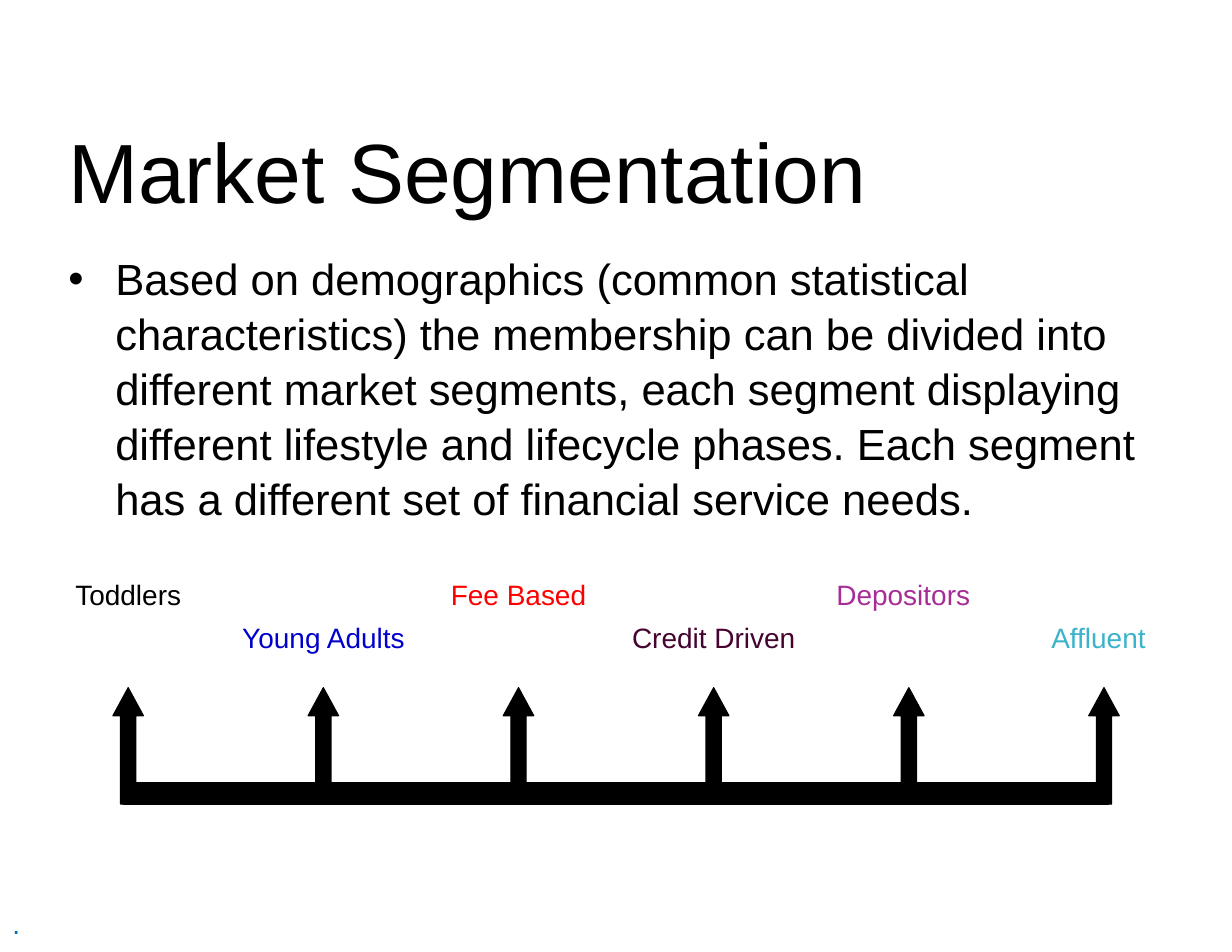
from typing import NamedTuple

from lxml.etree import SubElement
from pptx import Presentation
from pptx.dml.color import RGBColor
from pptx.enum.shapes import MSO_SHAPE
from pptx.enum.text import MSO_ANCHOR, MSO_AUTO_SIZE, PP_ALIGN
from pptx.oxml.ns import qn
from pptx.util import Inches, Pt

WIDTH, HEIGHT = Inches(11), Inches(8.5)
COLUMNS, ROWS = 44, 34
FONT = "Arial"
BLACK = "000000"

FIRST_CENTRE, PITCH = 4.58, 6.97
LABEL_ROWS = (20.4, 21.92)


class Area(NamedTuple):
    """A place on the slide, in grid columns and rows."""
    left: float
    top: float
    width: float
    height: float

    def lengths(self) -> tuple[int, int, int, int]:
        column, row = WIDTH / COLUMNS, HEIGHT / ROWS
        return (round(self.left * column), round(self.top * row),
                round(self.width * column), round(self.height * row))


class Segment(NamedTuple):
    name: str
    color: str
    label_width: float
    shift: float = 0


SEGMENTS = [
    Segment("Toddlers", BLACK, 6.96),
    Segment("Young Adults", "0000CC", 9.92),
    Segment("Fee Based", "FF0000", 6.96),
    Segment("Credit Driven", "45032F", 9.88),
    Segment("Depositors", "A72D96", 7.32, shift=-0.2),
    Segment("Affluent", "3BB3CB", 8.08, shift=-0.2),
]

DESCRIPTION = (
    "Based on demographics (common statistical characteristics) the membership "
    "can be divided into different market segments, each segment displaying "
    "different lifestyle and lifecycle phases. Each segment has a different "
    "set of financial service needs."
)


def rgb(color: str) -> RGBColor:
    return RGBColor.from_string(color)


def write(box, text: str, *, size: float, color: str = BLACK,
          align=PP_ALIGN.LEFT, anchor=MSO_ANCHOR.TOP,
          spacing: float = 1.0, bullet_indent: float = 0) -> None:
    frame = box.text_frame
    frame.word_wrap = True
    frame.auto_size = MSO_AUTO_SIZE.NONE
    frame.vertical_anchor = anchor
    frame.margin_left = frame.margin_right = Inches(0.11)
    frame.margin_top = frame.margin_bottom = Inches(0.06)
    para = frame.paragraphs[0]
    para.alignment = align
    para.line_spacing = spacing
    if bullet_indent:
        properties = para._p.get_or_add_pPr()
        properties.set("marL", str(Inches(bullet_indent)))
        properties.set("indent", str(-Inches(bullet_indent)))
        SubElement(properties, qn("a:buFont"), typeface=FONT)
        SubElement(properties, qn("a:buChar"), char="•")
    span = para.add_run()
    span.text = text
    span.font.name = FONT
    span.font.size = Pt(size)
    span.font.color.rgb = rgb(color)


def add_text(page, area: Area, text: str, **text_format) -> None:
    write(page.shapes.add_textbox(*area.lengths()), text, **text_format)


def add_solid(page, kind, area: Area):
    shape = page.shapes.add_shape(kind, *area.lengths())
    shape.shadow.inherit = False
    shape.fill.solid()
    shape.fill.fore_color.rgb = rgb(BLACK)
    shape.line.color.rgb = rgb(BLACK)
    shape.line.width = Pt(0.75)
    return shape


def add_segment(page, index: int, segment: Segment) -> None:
    """Draw one arrow of the scale with its label above."""
    centre = FIRST_CENTRE + index * PITCH
    arrow_width = 1.09
    arrow = add_solid(page, MSO_SHAPE.UP_ARROW,
                      Area(centre - arrow_width / 2, 24.56, arrow_width, 4.16))
    arrow.adjustments[0] = 0.5
    arrow.adjustments[1] = 0.92
    label = Area(centre + segment.shift - segment.label_width / 2,
                 LABEL_ROWS[index % 2], segment.label_width, 1.64)
    add_text(page, label, segment.name, size=18, color=segment.color,
             align=PP_ALIGN.CENTER)


def main() -> None:
    deck = Presentation()
    deck.slide_width, deck.slide_height = WIDTH, HEIGHT
    page = deck.slides.add_slide(deck.slide_layouts[5])

    title = page.shapes.title
    title.left, title.top, title.width, title.height = Area(2, 4, 41, 4.16).lengths()
    write(title, "Market Segmentation", size=54, anchor=MSO_ANCHOR.MIDDLE)

    add_text(page, Area(2, 8.68, 39.6, 15.88), DESCRIPTION, size=28,
             spacing=1.05, bullet_indent=0.42)
    add_text(page, Area(0, 32.12, 13.92, 1.64), ".", size=18, color="0070C0")

    add_solid(page, MSO_SHAPE.RECTANGLE, Area(4.4, 27.96, 35.2, 0.76))
    for index, segment in enumerate(SEGMENTS):
        add_segment(page, index, segment)

    deck.save("out.pptx")


if __name__ == "__main__":
    main()
